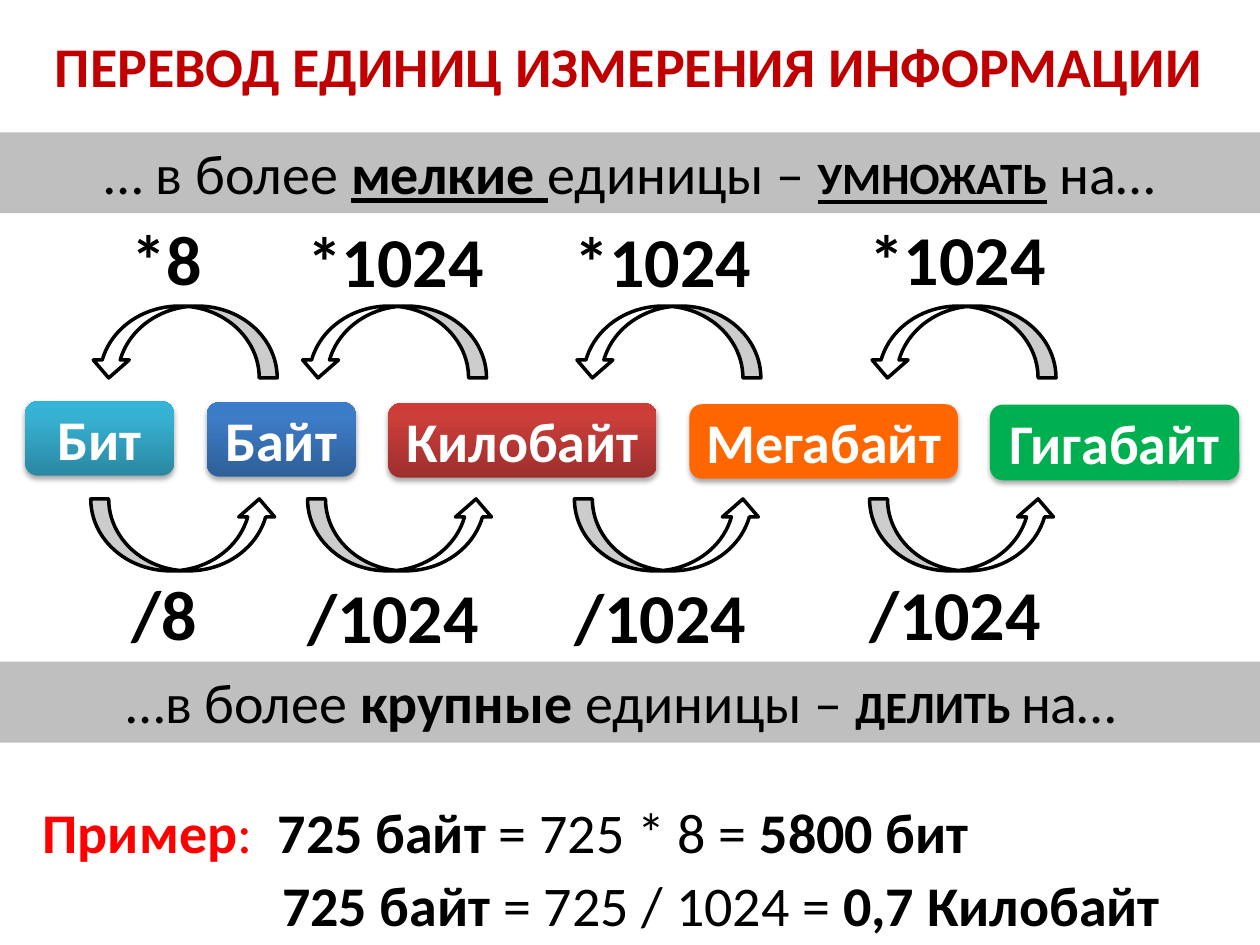
from dataclasses import dataclass
from typing import Optional

from lxml.etree import SubElement
from pptx import Presentation
from pptx.dml.color import RGBColor as RGB
from pptx.enum.shapes import MSO_SHAPE as Preset
from pptx.enum.text import MSO_ANCHOR as Anchor, MSO_AUTO_SIZE as AutoSize, PP_ALIGN as Align
from pptx.oxml.ns import qn
from pptx.util import Cm, Pt


@dataclass(frozen=True)
class Theme:
    font: str = "Calibri"
    body: int = 32
    factor: int = 40
    black: str = "000000"
    white: str = "FFFFFF"
    title: str = "C00000"
    accent: str = "FF0000"
    band: str = "BFBFBF"
    bit: tuple = ((0, "2A88A2"), (80, "37B1D2"), (100, "34B4D6"))
    byte: tuple = ((0, "2F5F99"), (80, "3D7CC7"), (100, "3A7CCB"))
    kilobyte: tuple = ((0, "9C2F2D"), (80, "CB3E3A"), (100, "CE3B37"))
    megabyte: tuple = ((0, "FF6600"),)
    gigabyte: tuple = ((0, "00B050"),)


THEME = Theme()


@dataclass(frozen=True)
class Span:
    text: str
    bold: bool = False
    underline: bool = False
    small_caps: bool = False
    color: str = THEME.black
    size: int = THEME.body


@dataclass(frozen=True)
class Unit:
    name: str
    width: float
    stops: tuple
    outline: Optional[str] = None


@dataclass(frozen=True)
class Step:
    factor: str
    down_left: float
    up_left: float
    label_left: float
    label_top: float
    label_width: float


UNITS = (
    Unit("Бит", 3, THEME.bit),
    Unit("Байт", 3, THEME.byte),
    Unit("Килобайт", 5.41, THEME.kilobyte),
    Unit("Мегабайт", 5.41, THEME.megabyte),
    Unit("Гигабайт", 5, THEME.gigabyte, "00B050"),
)
UNIT_LEFT, UNIT_TOP, UNIT_HEIGHT, UNIT_GAP, UNIT_DROP = 0.51, 8.09, 1.5, 0.66, 0.02

STEPS = (
    Step("8", 1.83, 1.83, 2.41, 4.22, 2.57),
    Step("1024", 6.05, 6.2, 5.94, 4.27, 4.27),
    Step("1024", 11.58, 11.58, 11.33, 4.27, 4.27),
    Step("1024", 17.53, 17.53, 17.27, 4.22, 4.27),
)
DOWN_TOP, UP_TOP, LABEL_SHIFT = 6.17, 10.06, 7.16
ARROW_WIDTH, ARROW_HEIGHT, LABEL_HEIGHT = 3.76, 1.45, 1.96
LINE_HEIGHT, SLIDE_WIDTH, SLIDE_HEIGHT = 1.63, 25.4, 19.05


def write(frame, spans: tuple, align=Align.LEFT, indent: float = 0.25, before: int = 0):
    frame.word_wrap = True
    frame.margin_left = Cm(indent)
    paragraph = frame.paragraphs[0]
    paragraph.alignment = align
    paragraph.space_before = Pt(before)
    for span in spans:
        run = paragraph.add_run()
        run.text = span.text
        run.font.name = THEME.font
        run.font.size = Pt(span.size)
        run.font.bold = span.bold
        run.font.underline = span.underline
        run.font.color.rgb = RGB.from_string(span.color)
        if span.small_caps:
            run.font._element.set("cap", "small")
    return paragraph


def add_preset(shapes, preset, left: float, top: float, width: float, height: float,
               fill: str, outline: Optional[str] = None, weight: float = 0.75):
    figure = shapes.add_shape(preset, Cm(left), Cm(top), Cm(width), Cm(height))
    figure.shadow.inherit = False
    figure.fill.solid()
    figure.fill.fore_color.rgb = RGB.from_string(fill)
    if outline:
        figure.line.color.rgb = RGB.from_string(outline)
        figure.line.width = Pt(weight)
    else:
        figure.line.fill.background()
    return figure


def add_line(shapes, left: float, top: float, width: float, spans: tuple,
             height: float = LINE_HEIGHT, **layout):
    box = shapes.add_textbox(Cm(left), Cm(top), Cm(width), Cm(height))
    paragraph = write(box.text_frame, spans, **layout)
    box.text_frame.auto_size = AutoSize.SHAPE_TO_FIT_TEXT
    return paragraph


def add_band(shapes, top: float, spans: tuple, **layout) -> None:
    band = add_preset(shapes, Preset.RECTANGLE, 0, top, SLIDE_WIDTH, LINE_HEIGHT, THEME.band)
    band.text_frame.vertical_anchor = Anchor.TOP
    write(band.text_frame, spans, before=12, **layout)
    band.text_frame.auto_size = AutoSize.SHAPE_TO_FIT_TEXT


def apply_gradient(figure, stops: tuple) -> None:
    figure.fill.gradient()
    figure.fill.gradient_angle = 90
    stop_list = figure._element.spPr.find(".//" + qn("a:gsLst"))
    for default_stop in list(stop_list):
        stop_list.remove(default_stop)
    for percent, color in stops:
        stop = SubElement(stop_list, qn("a:gs"), pos=str(percent * 1000))
        SubElement(stop, qn("a:srgbClr"), val=color)


def apply_shadow(figure) -> None:
    effects = figure._element.spPr.find(qn("a:effectLst"))
    shadow = SubElement(effects, qn("a:outerShdw"), blurRad=str(Pt(3.1)), dist=str(Pt(1.8)),
                        dir="5400000", rotWithShape="0")
    tint = SubElement(shadow, qn("a:srgbClr"), val=THEME.black)
    SubElement(tint, qn("a:alpha"), val="35000")


def add_unit(shapes, unit: Unit, left: float, top: float) -> None:
    tile = add_preset(shapes, Preset.ROUNDED_RECTANGLE, left, top, unit.width, UNIT_HEIGHT,
                      unit.stops[0][1], unit.outline)
    if len(unit.stops) > 1:
        apply_gradient(tile, unit.stops)
    apply_shadow(tile)
    tile.text_frame.vertical_anchor = Anchor.MIDDLE
    write(tile.text_frame, (Span(unit.name, bold=True, color=THEME.white),), Align.CENTER)


def add_step(shapes, step: Step, sign: str, left: float, top: float, flip: str,
             label_top: float) -> None:
    members = shapes.add_group_shape().shapes
    arrow = add_preset(members, Preset.CURVED_DOWN_ARROW, left, top, ARROW_WIDTH,
                       ARROW_HEIGHT, THEME.white, THEME.black, 2)
    arrow._element.spPr.find(qn("a:xfrm")).set(flip, "1")
    add_line(members, step.label_left, label_top, step.label_width,
             (Span(sign + step.factor, bold=True, size=THEME.factor),), LABEL_HEIGHT)


def main() -> None:
    deck = Presentation()
    deck.slide_width, deck.slide_height = Cm(SLIDE_WIDTH), Cm(SLIDE_HEIGHT)
    shapes = deck.slides.add_slide(deck.slide_layouts[6]).shapes

    left = UNIT_LEFT
    for index, unit in enumerate(UNITS):
        add_unit(shapes, unit, left, UNIT_TOP + index * UNIT_DROP)
        left += unit.width + UNIT_GAP

    add_band(shapes, 2.67, (
        Span("… в более "), Span("мелкие", bold=True, underline=True),
        Span(" ", underline=True), Span("единицы – "),
        Span("умножать", bold=True, underline=True, small_caps=True), Span(" на…"),
    ), align=Align.CENTER)
    add_band(shapes, 13.34, (
        Span("…в более "), Span("крупные", bold=True), Span(" единицы – "),
        Span("делить ", bold=True, small_caps=True), Span("на…"),
    ), indent=2.55)

    example = add_line(shapes, 0.61, 15.95, 24.5, (
        Span("Пример", bold=True, color=THEME.accent), Span(":\t", color=THEME.accent),
        Span("725 байт ", bold=True), Span("= 725 * 8 = "), Span("5800 бит", bold=True),
    ))
    tabs = SubElement(example._p.get_or_add_pPr(), qn("a:tabLst"))
    SubElement(tabs, qn("a:tab"), pos=str(Cm(4.74)), algn="l")
    add_line(shapes, 0.58, 0.51, 24.2, (
        Span("ПЕРЕВОД ЕДИНИЦ ИЗМЕРЕНИЯ ИНФОРМАЦИИ", bold=True, color=THEME.title),
    ), align=Align.CENTER)
    add_line(shapes, 0.84, 17.42, 24.5, (
        Span("725 байт ", bold=True), Span("= 725 / 1024 = "), Span("0,7 Килобайт", bold=True),
    ), indent=4.85)

    for step in STEPS:
        add_step(shapes, step, "*", step.down_left, DOWN_TOP, "flipH", step.label_top)
        add_step(shapes, step, "/", step.up_left, UP_TOP, "flipV", step.label_top + LABEL_SHIFT)

    deck.save("out.pptx")


if __name__ == "__main__":
    main()
